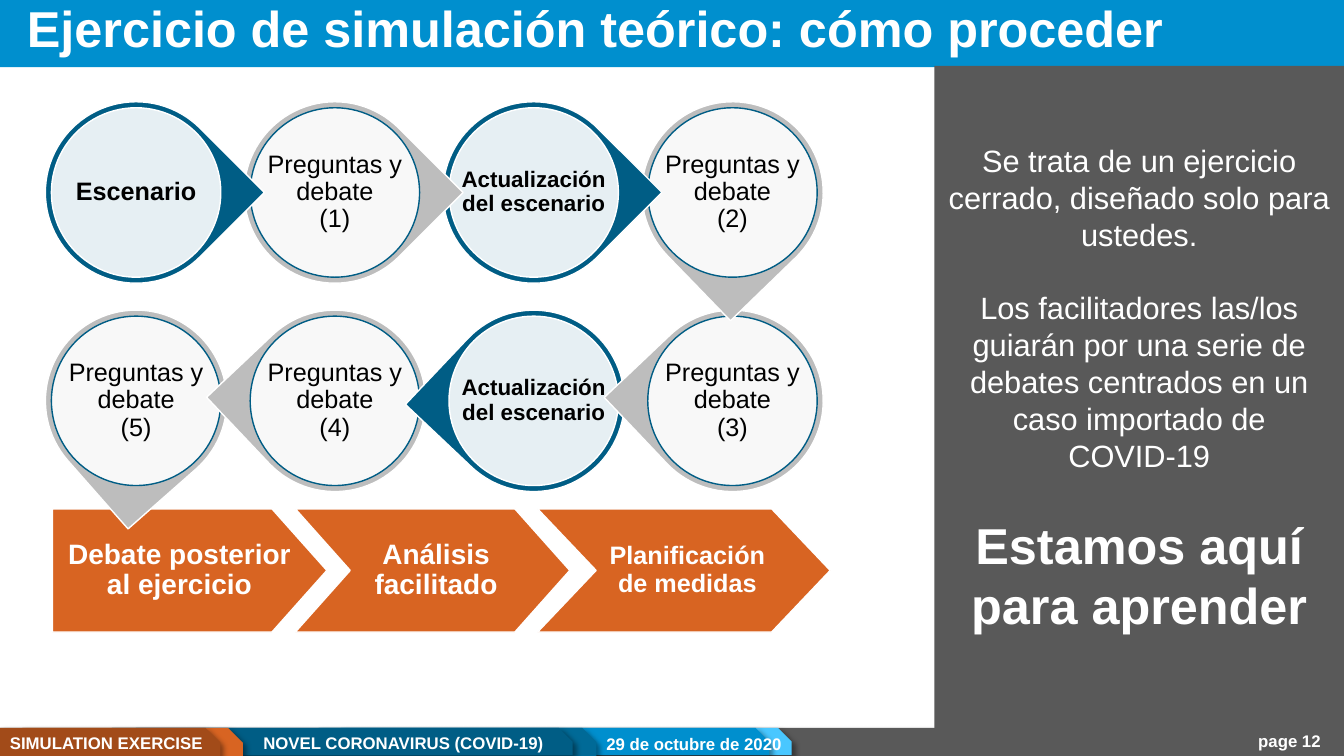
from pptx import Presentation
from pptx.dml.color import RGBColor
from pptx.enum.shapes import MSO_SHAPE as SHAPE
from pptx.enum.text import MSO_ANCHOR as ANCHOR, PP_ALIGN as ALIGN
from pptx.oxml import parse_xml
from pptx.oxml.ns import nsdecls, qn
from pptx.util import Pt
from lxml import etree

# Content
COLORS = {"white": "FFFFFF", "black": "000000", "sky": "008FCE", "light": "49C7FF",
          "teal": "006A97", "navy": "005D85", "orange": "D86422", "rust": "A24B19",
          "dark": "595959", "silver": "BDBDBD"}
TITLE = "Ejercicio de simulación teórico: cómo proceder"
# Text, column, row, rotation of the pointer, in reading order
STEPS = [
    ("Escenario", 0, 0, 45),
    ("Preguntas y\vdebate\v(1)", 1, 0, 45),
    ("Actualización\vdel escenario", 2, 0, 45),
    ("Preguntas y\vdebate\v(2)", 3, 0, 135.9),
    ("Preguntas y\vdebate\v(3)", 3, 1, 226.5),
    ("Actualización\vdel escenario", 2, 1, 223.4),
    ("Preguntas y\vdebate\v(4)", 1, 1, 226.6),
    ("Preguntas y\vdebate\v(5)", 0, 1, 138.6),
]
# Text, left, width, size, notched, left and right insets
PHASES = [
    ("Debate posterior al ejercicio", 37.5, 196, 20, False, 10, 24.5),
    ("Análisis facilitado", 211, 196, 20, True, 51, 46),
    ("Planificación de medidas", 384, 209, 18, True, 51, 46),
]
# Text, size, bold, space before
PANEL = [
    ("Se trata de un ejercicio cerrado, diseñado solo para ustedes.", 22, False, 0),
    ("Los facilitadores las/los guiarán por una serie de debates centrados en un "
     "caso importado de\vCOVID-19", 22, False, 26),
    ("Estamos aquí para aprender", 36, True, 29),
]
# Left, width, height, colour
FOOTER_TABS = [
    (243.5, 322, 19.5, "light"), (227.5, 322, 19.5, "sky"), (97, 329, 20, "teal"),
    (80, 329, 19.5, "navy"), (16, 157.5, 21, "orange"), (0, 157.5, 21, "rust"),
]
# Text, left, top, width, alignment
FOOTER_LABELS = [
    ("SIMULATION EXERCISE", 0, 520, 154, ALIGN.LEFT),
    ("NOVEL CORONAVIRUS (COVID-19)", 181, 520, 302, ALIGN.LEFT),
    ("page 12", 821.5, 518.5, 129, ALIGN.RIGHT),
    ("29 de octubre de 2020", 426, 520.5, 302, ALIGN.LEFT),
]
FOOTER_TOP = 520
COL_LEFT, COL_PITCH, ROW_TOPS = 32.4, 142, (72.7, 221.5)
DROP, RIM = 129.6, 4.3
PHASE_TOP, PHASE_HEIGHT = 363.5, 88


def color(name):
    return RGBColor.from_string(COLORS[name])


def write(sp, text, size=18, bold=False, fill="white", align=ALIGN.CENTER, spacing=None,
          before=0, anchor=ANCHOR.MIDDLE, margins=None, wrap=True, new=False):
    tf = sp.text_frame
    tf.word_wrap, tf.vertical_anchor = wrap, anchor
    if margins:
        tf.margin_left, tf.margin_top, tf.margin_right, tf.margin_bottom = map(Pt, margins)
    p = tf.add_paragraph() if new else tf.paragraphs[0]
    p.text, p.alignment = text, align
    if spacing:
        p.line_spacing = spacing
    if before:
        p.space_before = Pt(before)
    for r in p.runs:
        r.font.name, r.font.size, r.font.bold = "Arial", Pt(size), bold
        r.font.color.rgb = color(fill)


def paint(sp, fill, line=None):
    sp.shadow.inherit = False
    sp.fill.solid()
    sp.fill.fore_color.rgb = color(fill)
    if line:
        sp.line.color.rgb = color(line)
        sp.line.width = Pt(1)
    else:
        sp.line.fill.background()
    return sp


def add(kind, left, top, width, height, fill, line=None):
    sp = s.shapes.add_shape(kind, Pt(left), Pt(top), Pt(width), Pt(height))
    return paint(sp, fill, line)


def cast_shadow(sp):
    sp.element.spPr.find(qn("a:effectLst")).append(parse_xml(
        f'<a:outerShdw {nsdecls("a")} blurRad="50800" dist="38100" dir="2700000">'
        '<a:srgbClr val="000000"><a:alpha val="40000"/></a:srgbClr></a:outerShdw>'))


prs = Presentation()
prs.slide_width, prs.slide_height = Pt(960), Pt(540)
s = prs.slides.add_slide(prs.slide_layouts[5])

# Header and title
add(SHAPE.RECTANGLE, 0, 0, 960, 48, "sky")
title = s.shapes.title
title.left, title.top, title.width, title.height = Pt(12), Pt(-1), Pt(924), Pt(46)
write(title, TITLE, size=36, bold=True, align=ALIGN.LEFT, spacing=0.9)
title.element.getparent().append(title.element)

# Footer
cast_shadow(add(SHAPE.RECTANGLE, 0, FOOTER_TOP, 960, 20, "dark"))
for left, width, height, fill in FOOTER_TABS:
    tab = add(SHAPE.SNIP_1_RECTANGLE, left, FOOTER_TOP, width, height, fill)
    tab.adjustments[0] = 0.5
    cast_shadow(tab)
for text, left, top, width, align in FOOTER_LABELS:
    label = s.shapes.add_textbox(Pt(left), Pt(top), Pt(width), Pt(21.5))
    write(label, text, size=12, bold=True, align=align, anchor=ANCHOR.TOP)

# Side panel
panel = add(SHAPE.RECTANGLE, 667.5, 47, 292.5, 473, "dark")
for i, (text, size, bold, before) in enumerate(PANEL):
    write(panel, text, size=size, bold=bold, before=before, anchor=ANCHOR.TOP,
          margins=(7.2, 54, 7.2, 3.6), new=i > 0)

# Closing phases
for text, left, width, size, notched, inset_l, inset_r in PHASES:
    right, bottom = left + width, PHASE_TOP + PHASE_HEIGHT
    middle, tip = PHASE_TOP + PHASE_HEIGHT / 2, 0.2 * width
    outline = [(right - tip, PHASE_TOP), (right, middle), (right - tip, bottom), (left, bottom)]
    if notched:
        outline.append((left + tip, middle))
    fb = s.shapes.build_freeform(Pt(left), Pt(PHASE_TOP))
    fb.add_line_segments([(Pt(x), Pt(y)) for x, y in outline], close=True)
    phase = paint(fb.convert_to_shape(), "orange", "white")
    write(phase, text, size=size, bold=True, spacing=0.9, margins=(inset_l, 5, inset_r, 5))

# Steps, last one at the back so that each pointer overlaps the next step
for text, col, row, angle in reversed(STEPS):
    is_question = text.startswith("Preguntas")
    left, top = COL_LEFT + col * COL_PITCH, ROW_TOPS[row]
    drop = add(SHAPE.TEAR, left, top, DROP, DROP, "silver" if is_question else "navy", "white")
    drop.rotation = angle
    disc = add(SHAPE.OVAL, left + RIM, top + RIM, DROP - 2 * RIM, DROP - 2 * RIM,
               "white", "navy" if is_question else "white")
    rgb = disc.element.spPr.find(qn("a:solidFill")).find(qn("a:srgbClr"))
    etree.SubElement(rgb, qn("a:alpha")).set("val", "90000")
    write(disc, text, size=16 if text.startswith("Actualización") else 18,
          bold=not is_question, fill="black", spacing=0.9, margins=(0, 0, 0, 0), wrap=False)

prs.save("out.pptx")
